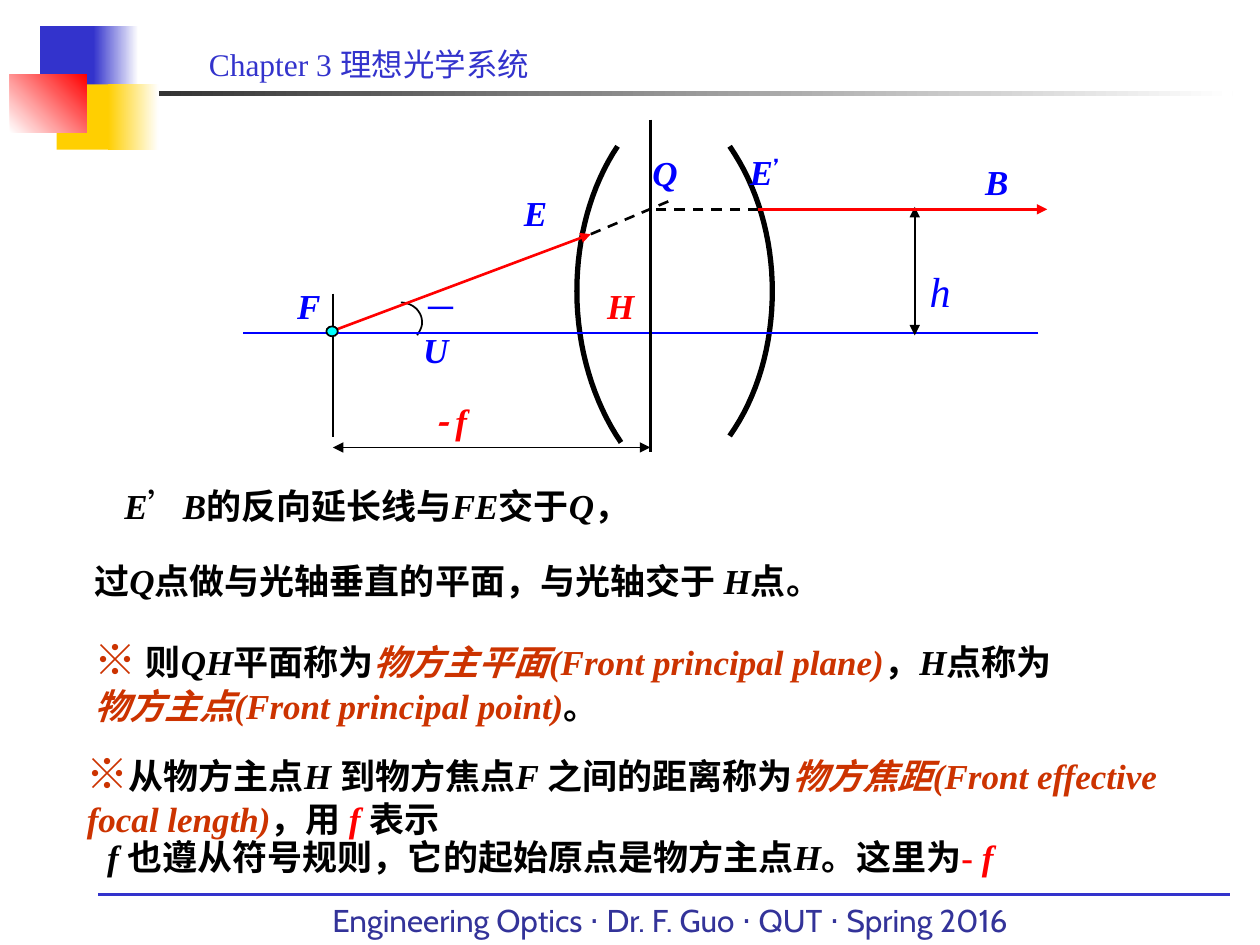
from lxml import etree
from pptx import Presentation, util as u
from pptx.dml.color import RGBColor
from pptx.enum import dml, shapes, text
from pptx.oxml.ns import qn

COLORS = {"black": "000000", "blue": "0000FF", "red": "FF0000", "rust": "CC3300",
          "indigo": "3333CC", "navy": "333399", "gold": "FFCF01", "white": "FFFFFF",
          "char": "1C1C1C", "cyan": "00FFFF"}

SERIF, SANS, CJK = "Times New Roman", "Cabin", "Noto Sans CJK SC"

# style: size, font, colour, bold, italic
STYLES = {
    "title": (18, SERIF, "indigo", False, False),
    "footer": (18, SANS, "navy", False, False),
    "body": (20, SERIF, "black", True, False),
    "var": (20, SERIF, "black", True, True),
    "prime": (20, SANS, "black", False, False),
    "mark": (24, SERIF, "rust", True, False),
    "term": (20, SERIF, "rust", True, True),
    "red": (20, SERIF, "red", True, False),
    "redvar": (20, SERIF, "red", True, True),
    "redminus": (20, CJK, "red", True, True),
    "label": (20, SERIF, "blue", True, True),
    "labelprime": (20, SANS, "blue", False, False),
    "minus": (20, SERIF, "blue", False, False),
    "height": (24, SERIF, "blue", False, True),
}

RECTS = [
    (0.69, 1.83, 24.16, 0.1, ("char", "white"), 0),
    (0.81, 0.53, 1.22, 1.32, ("indigo",), 0),
    (1.88, 0.53, 0.91, 1.32, ("indigo", "white"), 0),
    (1.14, 1.7, 1.17, 1.32, ("gold",), 0),
    (2.18, 1.7, 1.02, 1.32, ("gold", "white"), 0),
    (0.2, 1.5, 1.55, 1.17, ("white", "red"), 45),
]

CURVES = [
    (3, [(12.45, 2.95), (11.91, 3.76), (11.63, 4.8), (11.63, 5.87),
         (11.63, 7.01), (11.96, 8.1), (12.52, 8.92)]),
    (3, [(14.71, 2.95), (15.27, 3.76), (15.57, 4.8), (15.57, 5.87),
         (15.57, 6.96), (15.27, 8), (14.71, 8.79)]),
    (1, [(8.08, 6.1), (8.31, 6.1), (8.51, 6.27), (8.51, 6.5),
         (8.51, 6.6), (8.46, 6.68), (8.41, 6.76)]),
]

# line: x1, y1, x2, y2, colour, width, arrow ends, dashed
LINES = [
    (1.98, 18.03, 24.79, 18.03, "indigo", 1.5, "", False),
    (6.6, 6.71, 11.91, 4.72, "red", 1.5, "tail", False),
    (20.93, 6.71, 4.9, 6.71, "blue", 1.5, "", False),
    (18.44, 4.17, 18.44, 6.76, "black", 1, "head tail", False),
    (15.29, 4.22, 21.11, 4.22, "red", 1.5, "tail", False),
    (15.29, 4.22, 13.21, 4.22, "black", 1.5, "", True),
    (11.91, 4.72, 13.59, 4.01, "black", 1.5, "", True),
    (13.11, 2.41, 13.11, 9.12, "black", 1.5, "", False),
    (6.71, 5.92, 6.71, 8.81, "black", 1, "", False),
    (6.71, 9.02, 13.11, 9.02, "black", 1, "head tail", False),
]

FOCUS = (6.58, 6.58, 0.23, 0.2)

TEXTS = [
    (3.96, 0.53, 7.77, 1.27, [("Chapter 3 理想光学系统", "title")]),
    (6.45, 18.03, 19.05, 1.02,
     [("Engineering Optics ⋅ Dr. F. Guo ⋅ QUT ⋅ Spring 2016", "footer")]),
    (2.26, 9.65, 15.85, 1.09,
     [("E", "var"), ("’", "prime"), ("B", "var"), ("的反向延长线与", "body"),
      ("FE", "var"), ("交于", "body"), ("Q", "var"), ("，", "body")]),
    (1.65, 11.15, 22.3, 1.09,
     [("过", "body"), ("Q", "var"), ("点做与光轴垂直的平面，与光轴交于 ", "body"),
      ("H", "var"), ("点。", "body")]),
    (1.65, 12.65, 20.29, 2.11,
     [("※ ", "mark"), ("则", "body"), ("QH", "var"), ("平面称为", "body"),
      ("物方主平面(Front principal plane)", "term"), ("，", "body"), ("H", "var"),
      ("点称为", "body"), ("物方主点(Front principal point)", "term"), ("。", "body")]),
    (1.5, 14.94, 22.3, 2.11,
     [("※", "mark"), ("从物方主点", "body"), ("H ", "var"), ("到物方焦点", "body"),
      ("F ", "var"), ("之间的距离称为", "body"),
      ("物方焦距(Front effective focal length)", "term"), ("，用 ", "body"),
      ("f ", "redvar"), ("表示", "body")]),
    (1.91, 16.71, 22.3, 1.27,
     [("f ", "var"), ("也遵从符号规则，它的起始原点是物方主点", "body"), ("H", "var"),
      ("。这里为", "body"), ("- ", "red"), ("f", "redvar")]),
    (12.9, 2.92, 1.85, 1.09, [("Q", "label")]),
    (14.86, 2.9, 1.85, 1.09, [("E", "label"), ("’", "labelprime")]),
    (18.49, 5.23, 1.17, 1.27, [("h", "height")]),
    (5.74, 5.61, 1.85, 1.09, [("F", "label")]),
    (8.28, 5.66, 1.65, 1.09, [("－", "minus"), ("U", "label")]),
    (10.31, 3.73, 1.85, 1.09, [("E", "label")]),
    (11.99, 5.61, 1.85, 1.09, [("H", "redvar")]),
    (8.51, 7.92, 1.85, 1.09, [("- ", "redminus"), ("f", "redvar")]),
    (19.61, 3.12, 1.85, 1.09, [("B", "label")]),
]


def rgb(name):
    return RGBColor.from_string(COLORS[name])


def cm(*values):
    return [u.Cm(v) for v in values]


def add_rect(s, x, y, w, h, fill, angle):
    sp = s.shapes.add_shape(shapes.MSO_SHAPE.RECTANGLE, *cm(x, y, w, h))
    sp.shadow.inherit = False
    sp.line.fill.background()
    if len(fill) == 1:
        sp.fill.solid()
        sp.fill.fore_color.rgb = rgb(fill[0])
        return
    sp.fill.gradient()
    sp.fill.gradient_angle = angle
    for stop, name, position in zip(sp.fill.gradient_stops, fill, (0, 1)):
        stop.color.rgb = rgb(name)
        stop.position = position


def add_curve(s, width, points, steps=16):
    path = [points[0]]
    for k in range(0, len(points) - 1, 3):
        for n in range(1, steps + 1):
            t = n / steps
            weights = ((1 - t) ** 3, 3 * t * (1 - t) ** 2, 3 * t * t * (1 - t), t ** 3)
            path.append(tuple(sum(c * p[axis] for c, p in zip(weights, points[k:k + 4]))
                              for axis in (0, 1)))
    path = [cm(*p) for p in path]
    fb = s.shapes.build_freeform(*path[0])
    fb.add_line_segments(path[1:], close=False)
    sp = fb.convert_to_shape()
    sp.shadow.inherit = False
    sp.fill.background()
    sp.line.color.rgb = rgb("black")
    sp.line.width = u.Pt(width)


def add_line(s, x1, y1, x2, y2, color, width, ends, dashed):
    c = s.shapes.add_connector(shapes.MSO_CONNECTOR.STRAIGHT, *cm(x1, y1, x2, y2))
    c.line.color.rgb = rgb(color)
    c.line.width = u.Pt(width)
    if dashed:
        c.line.dash_style = dml.MSO_LINE.DASH
    sp_pr = c._element.spPr
    for end in ends.split():
        etree.SubElement(sp_pr.find(qn("a:ln")), qn(f"a:{end}End"), type="triangle")
    etree.SubElement(sp_pr, qn("a:effectLst"))


def add_text(s, x, y, w, h, runs):
    tf = s.shapes.add_textbox(*cm(x, y, w, h)).text_frame
    tf.word_wrap = True
    if runs[0][1] == "title":
        tf.vertical_anchor = text.MSO_ANCHOR.BOTTOM
    for content, style in runs:
        size, font, color, bold, italic = STYLES[style]
        r = tf.paragraphs[0].add_run()
        r.text = content
        f = r.font
        f.size, f.name, f.bold, f.italic = u.Pt(size), font, bold, italic
        f.color.rgb = rgb(color)
        etree.SubElement(r._r.get_or_add_rPr(), qn("a:ea"), typeface=CJK)


def main():
    prs = Presentation()
    prs.slide_width, prs.slide_height = cm(25.4, 19.05)
    s = prs.slides.add_slide(prs.slide_layouts[6])
    for add, items in ((add_rect, RECTS), (add_curve, CURVES), (add_line, LINES)):
        for item in items:
            add(s, *item)
    dot = s.shapes.add_shape(shapes.MSO_SHAPE.OVAL, *cm(*FOCUS))
    dot.shadow.inherit = False
    dot.fill.solid()
    dot.fill.fore_color.rgb = rgb("cyan")
    dot.line.color.rgb = rgb("black")
    dot.line.width = u.Pt(1)
    for item in TEXTS:
        add_text(s, *item)
    prs.save("out.pptx")


if __name__ == "__main__":
    main()
